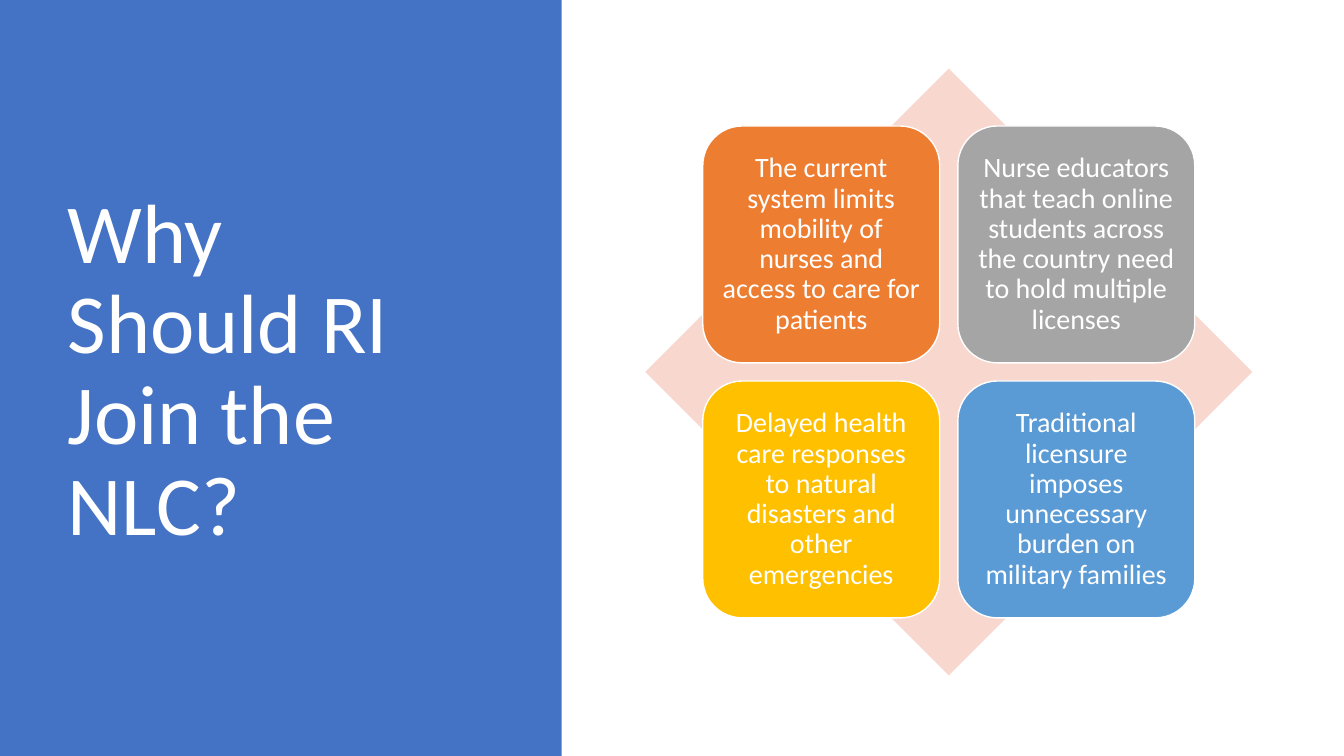
from typing import NamedTuple

from pptx import Presentation
from pptx.dml.color import RGBColor
from pptx.enum.shapes import MSO_SHAPE as Preset
from pptx.enum.text import MSO_ANCHOR as Anchor, MSO_AUTO_SIZE as AutoSize, PP_ALIGN as Align
from pptx.shapes.autoshape import Shape
from pptx.text.text import TextFrame
from pptx.util import Inches, Pt

WHITE = RGBColor(0xFF, 0xFF, 0xFF)
BLUE = RGBColor(0x44, 0x72, 0xC4)
PALE_PINK = RGBColor(0xF8, 0xD7, 0xCE)
ORANGE = RGBColor(0xED, 0x7D, 0x31)
GREY = RGBColor(0xA5, 0xA5, 0xA5)
GOLD = RGBColor(0xFF, 0xC0, 0x00)
LIGHT_BLUE = RGBColor(0x5B, 0x9B, 0xD5)

TITLE_ONLY = 5
CARD_LEFT, CARD_TOP, CARD_SIZE, CARD_STEP = 6.97, 1.25, 2.35, 2.53


class Reason(NamedTuple):
    text: str
    color: RGBColor


REASONS = [
    Reason("The current system limits mobility of nurses and access to care for patients", ORANGE),
    Reason("Nurse educators that teach online students across the country need to hold "
           "multiple licenses", GREY),
    Reason("Delayed health care responses to natural disasters and other emergencies", GOLD),
    Reason("Traditional licensure imposes unnecessary burden on military families", LIGHT_BLUE),
]


def write(frame: TextFrame, text: str, *, size: float, align: Align,
          inset: tuple[float, float] = (0.1, 0.05), after: float = 0) -> None:
    """Fill a frame with one white, vertically centred paragraph."""
    frame.word_wrap = True
    frame.auto_size = AutoSize.NONE
    frame.vertical_anchor = Anchor.MIDDLE
    frame.margin_left = frame.margin_right = Inches(inset[0])
    frame.margin_top = frame.margin_bottom = Inches(inset[1])
    para = frame.paragraphs[0]
    para.alignment = align
    para.line_spacing = 0.9
    para.space_before = Pt(0)
    para.space_after = Pt(after)
    span = para.add_run()
    span.text = text
    span.font.name = "Calibri"
    span.font.size = Pt(size)
    span.font.color.rgb = WHITE


def add_block(shapes, preset: Preset, left: float, top: float, width: float, height: float,
              color: RGBColor, outline: RGBColor | None = None) -> Shape:
    block = shapes.add_shape(preset, Inches(left), Inches(top), Inches(width), Inches(height))
    block.shadow.inherit = False
    block.fill.solid()
    block.fill.fore_color.rgb = color
    if outline is None:
        block.line.fill.background()
    else:
        block.line.color.rgb = outline
        block.line.width = Pt(1)
    return block


def add_reasons(shapes) -> None:
    """Draw the diamond with the two-by-two grid of cards over it."""
    add_block(shapes, Preset.DIAMOND, 6.4, 0.68, 6.02, 6.02, PALE_PINK)
    for index, reason in enumerate(REASONS):
        row, column = divmod(index, 2)
        card = add_block(shapes, Preset.ROUNDED_RECTANGLE, CARD_LEFT + column * CARD_STEP,
                         CARD_TOP + row * CARD_STEP, CARD_SIZE, CARD_SIZE, reason.color, WHITE)
        write(card.text_frame, reason.text, size=20, align=Align.CENTER,
              inset=(0.08, 0.08), after=7)


def main() -> None:
    deck = Presentation()
    deck.slide_width, deck.slide_height = Inches(13.33), Inches(7.5)
    page = deck.slides.add_slide(deck.slide_layouts[TITLE_ONLY])

    title = page.shapes.title
    title.left, title.top = Inches(0.57), Inches(0.68)
    title.width, title.height = Inches(4.16), Inches(6.02)
    write(title.text_frame, "Why Should RI Join the NLC?", size=60, align=Align.LEFT)

    panel = add_block(page.shapes, Preset.RECTANGLE, 0, 0, 5.57, 7.5, BLUE)
    title.element.addprevious(panel.element)  # the panel lies behind the title

    add_reasons(page.shapes.add_group_shape().shapes)
    deck.save("out.pptx")


if __name__ == "__main__":
    main()
